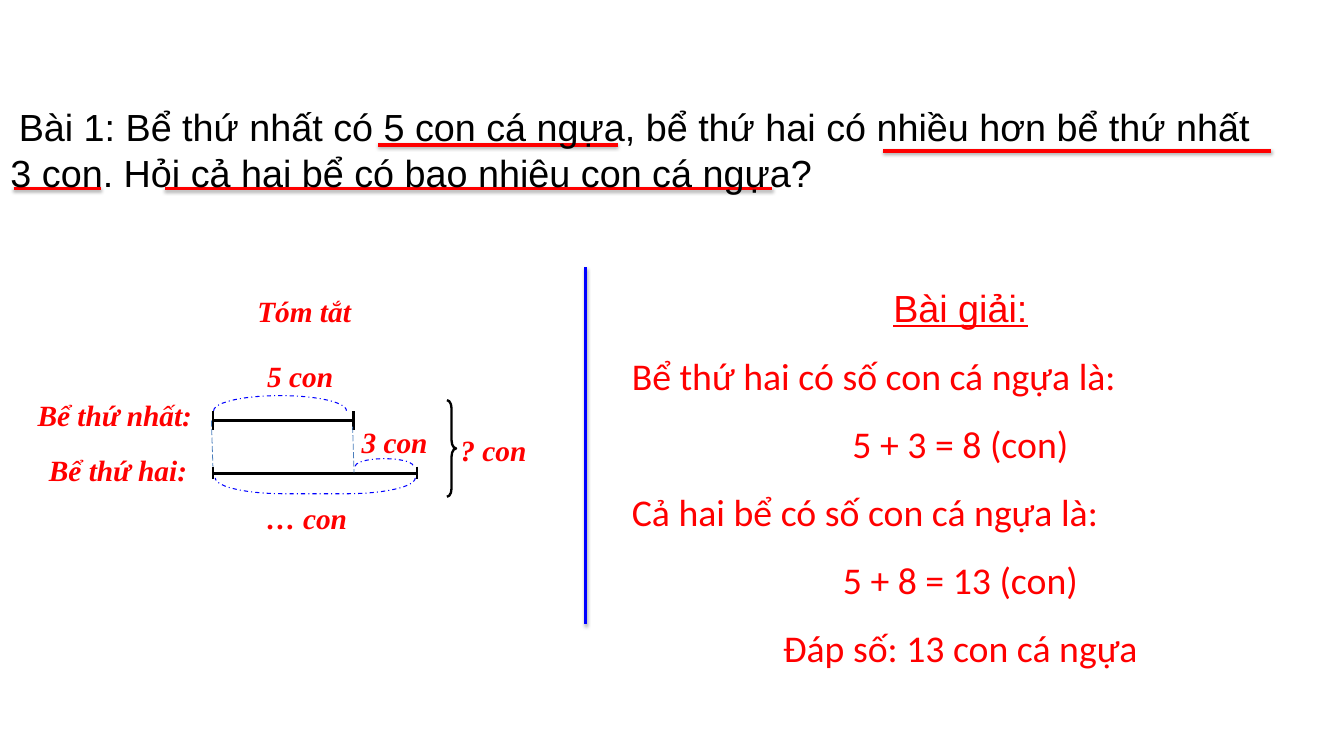
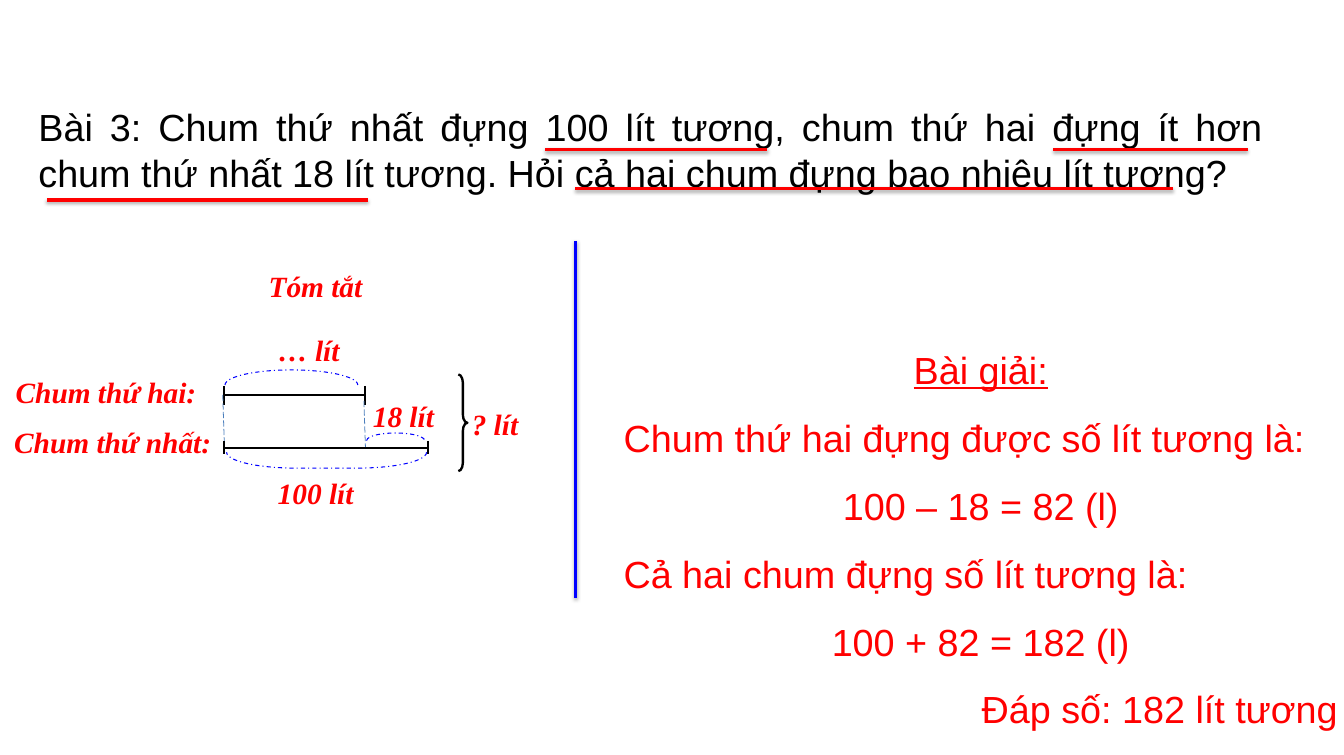
import pptx
import pptx.util
import pptx.dml.color
import pptx.enum.dml
import pptx.enum.shapes
import pptx.enum.text
import pptx.oxml
import pptx.oxml.ns

PX = 9144
BLACK = pptx.dml.color.RGBColor(0x00, 0x00, 0x00)
RED = pptx.dml.color.RGBColor(0xFF, 0x00, 0x00)
BLUE = pptx.dml.color.RGBColor(0x00, 0x00, 0xFF)
STEEL = pptx.dml.color.RGBColor(0x4B, 0x7E, 0xBC)
SHAPE = pptx.enum.shapes.MSO_SHAPE
DASH = pptx.enum.dml.MSO_LINE
ALIGN = pptx.enum.text.PP_ALIGN
NO_SHADOW = f'<a:effectLst {pptx.oxml.ns.nsdecls("a")}/>'
SOFT_SHADOW = (
    f'<a:effectLst {pptx.oxml.ns.nsdecls("a")}>'
    '<a:outerShdw blurRad="40000" dist="23000" dir="5400000" rotWithShape="0">'
    '<a:srgbClr val="000000"><a:alpha val="35000"/></a:srgbClr>'
    '</a:outerShdw></a:effectLst>')


def px(*values):
    return [value * PX for value in values]


def write(p, text, font="Arial", size=36, color=BLACK, bold=False, italic=False,
          underline=False, align=ALIGN.LEFT, spacing=None, indent=0):
    if indent:
        p._p.get_or_add_pPr().set("indent", str(indent * PX))
    p.alignment = align
    if spacing:
        p.line_spacing = spacing
    r = p.add_run()
    r.text = text
    r.font.name = font
    r.font.size = pptx.util.Pt(size)
    r.font.color.rgb = color
    r.font.bold = bold
    r.font.italic = italic
    r.font.underline = underline


def add_text(shapes, box, text, **fmt):
    tf = shapes.add_textbox(*px(*box)).text_frame
    tf.word_wrap = True
    tf.auto_size = pptx.enum.text.MSO_AUTO_SIZE.SHAPE_TO_FIT_TEXT
    lines = [(text, {})] if isinstance(text, str) else text
    for i, (line, own) in enumerate(lines):
        p = tf.add_paragraph() if i else tf.paragraphs[0]
        write(p, line, **{**fmt, **own})


def style_line(line, color, width, dash=None):
    line.color.rgb = color
    line.width = pptx.util.Pt(width)
    if dash:
        line.dash_style = dash


def add_line(shapes, x1, y1, x2, y2, color=BLACK, width=2.25, dash=None,
             effect=NO_SHADOW):
    sp = shapes.add_connector(pptx.enum.shapes.MSO_CONNECTOR.STRAIGHT,
                              *px(x1, y1, x2, y2))
    style_line(sp.line, color, width, dash)
    sp._element.spPr.append(pptx.oxml.parse_xml(effect))


def add_underlines(s, spans):
    for x1, x2, y in spans:
        add_line(s.shapes, x1, y, x2, y, RED, 3, effect=SOFT_SHADOW)


def add_divider(s, x, y):
    add_line(s.shapes, x, y, x, y + 473, BLUE, 3, effect=SOFT_SHADOW)


def add_outline(s, kind, box, adjustment, color, width, rotation=0, dash=None):
    sp = s.shapes.add_shape(kind, *px(*box))
    sp.shadow.inherit = False
    sp.fill.background()
    sp.adjustments[0] = adjustment
    sp.rotation = rotation
    style_line(sp.line, color, width, dash)


def add_arc(s, box, rotation):
    add_outline(s, SHAPE.RIGHT_BRACKET, box, 4.363, BLUE, 1, rotation,
                DASH.DASH_DOT)


def add_segment(s, x1, x2, y, tick_top, tick_bottom):
    shapes = s.shapes.add_group_shape().shapes
    add_line(shapes, x1, y, x2, y)
    for x in (x1, x2):
        add_line(shapes, x, tick_top, x, tick_bottom)


def add_label(s, x, y, w, text):
    add_text(s.shapes, (x, y, w, 57), text, font="Times New Roman", size=28,
             color=RED, bold=True, italic=True)


def add_summary(s, dx, dy, rows, short, extra, long, total):
    for x, y, w, text in rows:
        add_label(s, x, y, w, text)
    for x, y, w, text in ((331, 384, 357, "Tóm tắt"), (344, 469, 226, short),
                          (469, 557, 133, extra), (343, 658, 233, long),
                          (600, 567, 133, total)):
        add_label(s, x + dx, y + dy, w, text)
    add_outline(s, SHAPE.RIGHT_BRACE, (592 + dx, 530 + dy, 12, 128), 0.914,
                BLACK, 2.25)
    add_segment(s, 282 + dx, 468 + dx, 557 + dy, 545 + dy, 570 + dy)
    add_segment(s, 282 + dx, 552 + dx, 627 + dy, 618 + dy, 635 + dy)
    add_arc(s, (361 + dx, 446 + dy, 20, 176), 270)
    add_arc(s, (407 + dx, 511 + dy, 21, 265), 90)
    add_arc(s, (504 + dx, 574 + dy, 10, 77), 270)
    for x, y in ((280, 557), (467, 565)):
        add_line(s.shapes, x + dx, y + dy, x + dx + 2, y + dy + 61, STEEL, 0.75,
                 DASH.LONG_DASH)


def add_solution(s, box, font, title_spacing, steps, answer, answer_align):
    lines = [("Bài giải:", dict(font="Arial", underline=True, align=ALIGN.CENTER,
                                spacing=title_spacing))]
    for statement, sum_text in steps:
        lines.append((statement, dict(align=ALIGN.JUSTIFY)))
        lines.append((sum_text, dict(align=ALIGN.CENTER)))
    lines.append((answer, dict(align=answer_align)))
    add_text(s.shapes, box, lines, font=font, color=RED, spacing=1.5)


def add_seahorse_slide(s):
    add_divider(s, 776, 354)
    add_underlines(s, [(501, 818, 192), (1170, 1684, 200), (218, 1023, 250),
                       (18, 134, 250)])
    add_text(s.shapes, (4, 133, 1695, 192),
             "Bài 1: Bể thứ nhất có 5 con cá ngựa, bể thứ hai có nhiều hơn "
             "bể thứ nhất 3 con. Hỏi cả hai bể có bao nhiêu con cá ngựa?",
             indent=11)
    add_solution(s, (827, 372, 890, 525), "Calibri", None,
                 [("Bể thứ hai có số con cá ngựa là:", "5 + 3 = 8 (con)"),
                  ("Cả hai bể có số con cá ngựa là:", "5 + 8 = 13 (con)")],
                 "Đáp số: 13 con cá ngựa", ALIGN.CENTER)
    add_summary(s, 0, 0, [(40, 521, 276, "Bể thứ nhất:"),
                          (55, 594, 346, "Bể thứ hai:")],
                "5 con", "3 con", "… con", "? con")


def add_jar_slide(s):
    add_text(s.shapes, (41, 133, 1642, 131),
             "Bài 3: Chum thứ nhất đựng 100 lít tương, chum thứ hai đựng ít hơn "
             "chum thứ nhất 18 lít tương. Hỏi cả hai chum đựng bao nhiêu lít "
             "tương?", align=ALIGN.JUSTIFY)
    add_solution(s, (816, 424, 966, 544), "Arial", 1.5,
                 [("Chum thứ hai đựng được số lít tương là:",
                   "100 – 18 = 82 (l)"),
                  ("Cả hai chum đựng số lít tương là:", "100 + 82 = 182 (l)")],
                 "Đáp số: 182 lít tương", ALIGN.RIGHT)
    add_divider(s, 762, 319)
    add_underlines(s, [(722, 1016, 198), (1395, 1653, 198), (62, 487, 265),
                       (762, 1553, 250)])
    add_summary(s, 15, -34, [(11, 491, 286, "Chum thứ hai:"),
                             (9, 557, 346, "Chum thứ nhất:")],
                "… lít", "18 lít", "100 lít", "? lít")


def main():
    prs = pptx.Presentation()
    prs.slide_width, prs.slide_height = px(1780, 1000)
    for build in (add_seahorse_slide, add_jar_slide):
        build(prs.slides.add_slide(prs.slide_layouts[6]))
    prs.save("out.pptx")


if __name__ == "__main__":
    main()
